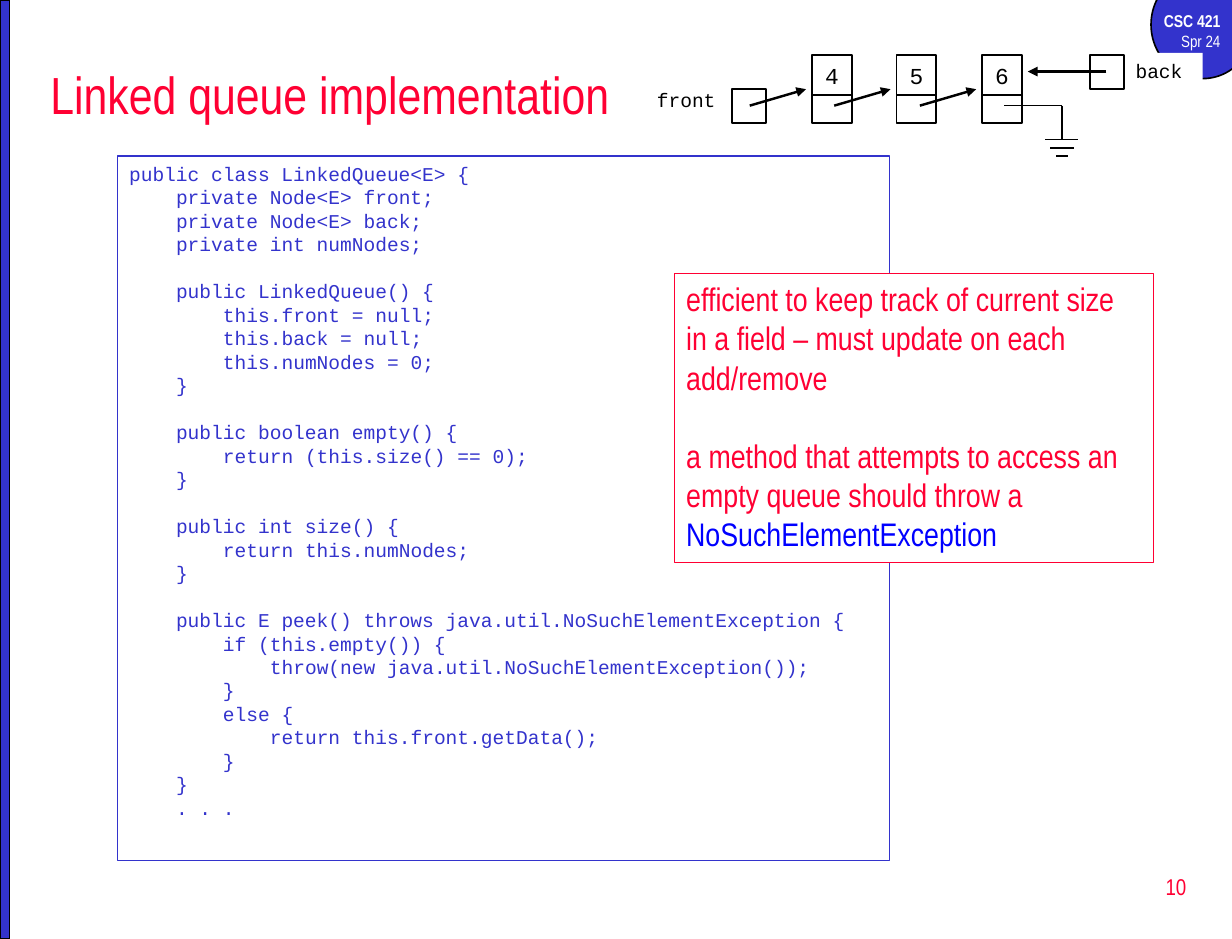
from pptx import Presentation
from pptx.dml.color import RGBColor
from pptx.enum.shapes import MSO_CONNECTOR as Connector, MSO_SHAPE as Shape
from pptx.enum.text import MSO_ANCHOR as Anchor, MSO_AUTO_SIZE as AutoSize, PP_ALIGN as Align
from pptx.oxml.ns import qn
from pptx.util import Emu, Pt
from lxml import etree

EMU_PER_PX = 9144  # 100 px to the inch
BLUE, RED, BLACK, WHITE, LINK = "3333CC", "FF0033", "000000", "FFFFFF", "0000FF"
SANS, MONO = "Arial Narrow", "Courier New"
CODE_INDENT = 40  # four characters of 12 pt code
CODE_LEADING = 14.4
NOTE_GAP = 24

CODE = """\
public class LinkedQueue<E> {
    private Node<E> front;
    private Node<E> back;
    private int numNodes;

    public LinkedQueue() {
        this.front = null;
        this.back = null;
        this.numNodes = 0;
    }

    public boolean empty() {
        return (this.size() == 0);
    }

    public int size() {
        return this.numNodes;
    }

    public E peek() throws java.util.NoSuchElementException {
        if (this.empty()) {
            throw(new java.util.NoSuchElementException());
        }
        else {
            return this.front.getData();
        }
    }
    . . ."""


def px(length):
    return Emu(length * EMU_PER_PX)


def rgb(value):
    return RGBColor.from_string(value)


def place(shape, left, top, width, height):
    shape.left, shape.top = px(left), px(top)
    shape.width, shape.height = px(width), px(height)


def paint(shape, fill, line=None, weight=1):
    shape.fill.solid()
    shape.fill.fore_color.rgb = rgb(fill)
    if line:
        shape.line.color.rgb = rgb(line)
        shape.line.width = Pt(weight)
    else:
        shape.line.fill.background()


def style(span, size, color, font=SANS, bold=False):
    span.font.size, span.font.name, span.font.bold = Pt(size), font, bold
    span.font.color.rgb = rgb(color)


def write(shape, text, size, color, font=SANS, align=Align.LEFT, anchor=Anchor.TOP):
    frame = shape.text_frame
    frame.word_wrap, frame.auto_size = True, AutoSize.NONE
    frame.vertical_anchor = anchor
    frame.text = text
    for para in frame.paragraphs:
        para.alignment = align
        for span in para.runs:
            style(span, size, color, font)
    return frame


def add_box(slide, bounds, fill=WHITE, line=BLACK, weight=1, kind=Shape.RECTANGLE):
    box = slide.shapes.add_shape(kind, *map(px, bounds))
    box.shadow.inherit = False
    paint(box, fill, line, weight)
    return box


def add_label(slide, bounds, text, size=12, align=Align.LEFT, line=None):
    box = add_box(slide, bounds, line=line)
    frame = write(box, text, size, BLACK, MONO, align, Anchor.MIDDLE)
    frame.margin_top = frame.margin_bottom = 0


def add_line(slide, start, end, weight=1, arrow=False):
    line = slide.shapes.add_connector(Connector.STRAIGHT, *map(px, start + end))
    line.line.color.rgb = rgb(BLACK)
    line.line.width = Pt(weight)
    properties = line.element.spPr
    if arrow:
        etree.SubElement(properties.find(qn("a:ln")), qn("a:tailEnd"), type="triangle")
    etree.SubElement(properties, qn("a:effectLst"))


def add_frame(slide):
    """Side bar, course badge and page number."""
    add_box(slide, (981, -25, 88, 92), BLUE, kind=Shape.OVAL)
    add_box(slide, (0, 0, 8, 800), BLUE)
    course = slide.shapes.add_textbox(*map(px, (967, 4, 83, 46)))
    frame = write(course, "CSC 421\nSpr 24", 10, WHITE, align=Align.RIGHT)
    style(frame.paragraphs[0].runs[0], 10.5, WHITE, bold=True)
    number = slide.shapes.add_textbox(*map(px, (802, 729, 219, 53)))
    write(number, "10", 14, RED, align=Align.RIGHT, anchor=Anchor.MIDDLE)


def fill_code(body):
    """Code listing: indents and blank lines become paragraph settings."""
    place(body, 100, 133, 658, 600)
    paint(body, WHITE, BLUE, 0.75)
    lines = CODE.split("\n")
    shown = [(line, above) for line, above in zip(lines, ["{"] + lines) if line]
    frame = write(body, "\n".join(line.strip() for line, _ in shown), 12, BLUE, MONO)
    for para, (line, above) in zip(frame.paragraphs, shown):
        level = (len(line) - len(line.lstrip())) // 4
        para.line_spacing = Pt(CODE_LEADING)
        para.space_before = Pt(0 if above else CODE_LEADING)
        properties = para._p.get_or_add_pPr()
        properties.set("marL", str(px(level * CODE_INDENT)))
        properties.set("indent", "0")
        etree.SubElement(properties, qn("a:buNone"))


def add_queue(slide):
    """Linked nodes with front and back pointers."""
    add_label(slide, (550, 70, 74, 30), "front")
    add_box(slide, (624, 76, 29, 29))
    nodes = list(zip("456", (692, 764, 837)))
    for value, left in nodes:
        add_box(slide, (left, 76, 34, 29))
        add_label(slide, (left, 47, 34, 34), value, 14, Align.CENTER, BLACK)
    for _, left in nodes:
        add_line(slide, (left - 53, 90), (left - 5, 76), 1.5, arrow=True)

    # Null pointer of the last node
    add_line(slide, (856, 90), (905, 90))
    add_line(slide, (905, 90), (905, 119))
    for half, top in ((14, 119), (10, 126), (5, 133)):
        add_line(slide, (905 - half, top), (905 + half, top))

    add_label(slide, (958, 45, 67, 30), "back")
    add_box(slide, (929, 47, 29, 29))
    add_line(slide, (943, 61), (876, 61), 1.5, arrow=True)


def add_note(slide):
    note = add_box(slide, (575, 233, 408, 246), line=RED, weight=0.75)
    frame = write(
        note,
        "efficient to keep track of current size in a field – must update on each add/remove\n"
        "a method that attempts to access an empty queue should throw a ",
        20, RED)
    para = frame.paragraphs[1]
    para.space_before = Pt(NOTE_GAP)
    span = para.add_run()
    span.text = "NoSuchElementException"
    style(span, 20, LINK)


def main():
    deck = Presentation()
    deck.slide_width, deck.slide_height = px(1050), px(800)
    slide = deck.slides.add_slide(deck.slide_layouts[1])
    title, body = slide.placeholders
    place(title, 33, 42, 992, 75)
    write(title, "Linked queue implementation", 32, RED, anchor=Anchor.MIDDLE)
    fill_code(body)
    add_frame(slide)
    add_queue(slide)
    add_note(slide)
    deck.save("out.pptx")


if __name__ == "__main__":
    main()
